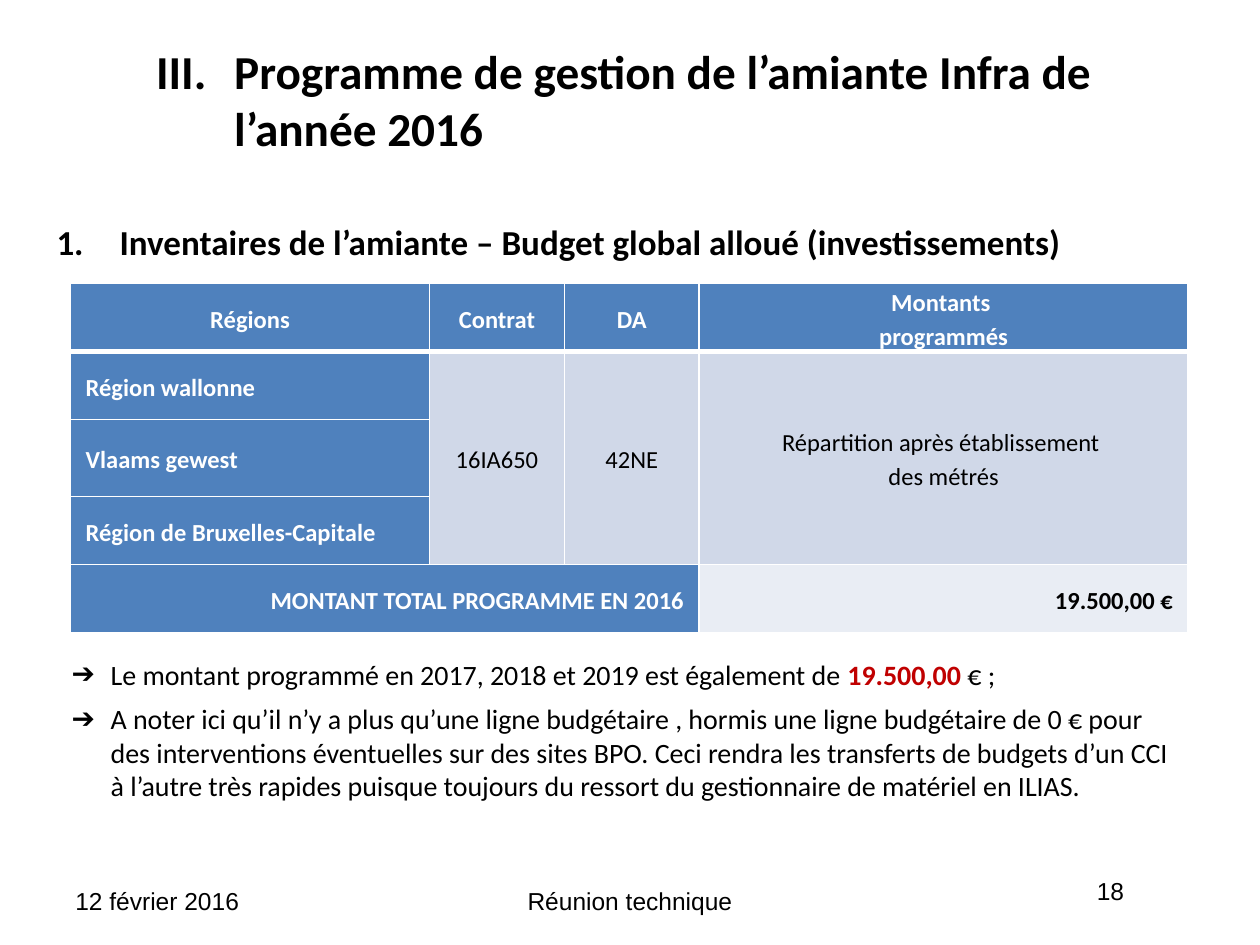
import pptx
import pptx.dml.color
import pptx.enum.text
import pptx.oxml.ns
import pptx.util
from lxml import etree

ALIGN = pptx.enum.text.PP_ALIGN
MIDDLE = pptx.enum.text.MSO_ANCHOR.MIDDLE
BLACK, WHITE, RED = "000000", "FFFFFF", "C00000"
BLUE, PALE, PALER = "4F81BD", "D0D8E8", "E9EDF4"
COLUMNS, ROWS = 100, 75


def color(value):
    return pptx.dml.color.RGBColor.from_string(value)


def add_element(parent, tag, **attributes):
    return etree.SubElement(parent, pptx.oxml.ns.qn(tag), attributes)


class SlideBuilder:
    """Holds the style and the slide; lengths are grid columns and rows."""

    def __init__(self, deck):
        self.column = deck.slide_width / COLUMNS
        self.row = deck.slide_height / ROWS
        self.slide = deck.slides.add_slide(deck.slide_layouts[6])

    def place(self, left, top, width, height):
        return (round(left * self.column), round(top * self.row),
                round(width * self.column), round(height * self.row))

    def style(self, para, size, name="Calibri", bold=False, ink=BLACK, align=ALIGN.LEFT):
        para.alignment = align
        para.font.size = pptx.util.Pt(size)
        para.font.name = name
        para.font.bold = bold
        para.font.color.rgb = color(ink)

    def text(self, area, content, size, anchor=None, **style):
        frame = self.slide.shapes.add_textbox(*self.place(*area)).text_frame
        frame.word_wrap = True
        frame.vertical_anchor = anchor
        para = frame.paragraphs[0]
        para.text = content
        self.style(para, size, **style)
        return para

    def hang(self, para, indent, bullet, **attributes):
        """Give the paragraph a hanging indent, in columns, and a bullet element."""
        properties = para._p.get_or_add_pPr()
        properties.set("marL", str(round(indent * self.column)))
        properties.set("indent", str(-round(indent * self.column)))
        add_element(properties, "a:buFont", typeface="+mj-lt" if bullet == "a:buAutoNum" else "Arial")
        add_element(properties, bullet, **attributes)

    def heading(self, area, content, size, indent, numbering, start=1, anchor=None):
        frame = self.slide.shapes.add_textbox(*self.place(*area)).text_frame
        frame.word_wrap = True
        frame.vertical_anchor = anchor
        para = frame.paragraphs[0]
        para.text = content
        self.hang(para, indent, "a:buAutoNum", type=numbering, startAt=str(start))
        self.style(para, size, bold=True)

    def bullets(self, area, items, size, indent):
        """Each item is a list of (text, emphasised) parts."""
        frame = self.slide.shapes.add_textbox(*self.place(*area)).text_frame
        frame.word_wrap = True
        for index, parts in enumerate(items):
            para = frame.add_paragraph() if index else frame.paragraphs[0]
            self.hang(para, indent, "a:buChar", char="➔")
            para.space_after = pptx.util.Pt(6)
            self.style(para, size)
            for content, emphasised in parts:
                span = para.add_run()
                span.text = content
                if emphasised:
                    span.font.bold = True
                    span.font.color.rgb = color(RED)

    def borders(self, cell, bottom):
        properties = cell._tc.get_or_add_tcPr()
        for side, width in (("L", 1), ("R", 1), ("T", 1), ("B", bottom)):
            line = add_element(properties, f"a:ln{side}", w=str(pptx.util.Pt(width)))
            add_element(add_element(line, "a:solidFill"), "a:srgbClr", val=WHITE)

    def table(self, area, widths, heights, cells, merges):
        """Cells map (row, column) to (text, fill, ink, bold, alignment)."""
        grid = self.slide.shapes.add_table(
            len(heights), len(widths), *self.place(*area)).table
        for column, width in zip(grid.columns, widths):
            column.width = round(width * self.column)
        for row, height in zip(grid.rows, heights):
            row.height = round(height * self.row)
        for first, last in merges:
            grid.cell(*first).merge(grid.cell(*last))
        for row in range(len(heights)):
            for column in range(len(widths)):
                self.borders(grid.cell(row, column), bottom=1 if row else 3)
        for position, (content, fill, ink, bold, align) in cells.items():
            cell = grid.cell(*position)
            cell.fill.solid()
            cell.fill.fore_color.rgb = color(fill)
            cell.vertical_anchor = MIDDLE
            cell.margin_left = cell.margin_right = round(1.2 * self.column)
            cell.margin_top = cell.margin_bottom = 0
            para = cell.text_frame.paragraphs[0]
            para.text = content
            para.line_spacing = 1.15
            self.style(para, 14, bold=bold, ink=ink, align=align)


def budget_cells():
    headers = ["Régions", "Contrat", "DA", "Montants \vprogrammés"]
    regions = ["Région wallonne", "Vlaams gewest", "Région de Bruxelles-Capitale"]
    shared = ["16IA650", "42NE", "Répartition après établissement \vdes métrés"]
    cells = {(0, column): (name, BLUE, WHITE, True, ALIGN.CENTER)
             for column, name in enumerate(headers)}
    cells |= {(row, 0): (name, BLUE, WHITE, True, ALIGN.LEFT)
              for row, name in enumerate(regions, 1)}
    cells |= {(1, column): (value, PALE, BLACK, False, ALIGN.CENTER)
              for column, value in enumerate(shared, 1)}
    cells[4, 0] = ("MONTANT TOTAL PROGRAMME EN 2016", BLUE, WHITE, True, ALIGN.RIGHT)
    cells[4, 3] = ("19.500,00 €", PALER, BLACK, True, ALIGN.RIGHT)
    return cells


def main():
    deck = pptx.Presentation()
    deck.slide_width = pptx.util.Inches(10)
    deck.slide_height = pptx.util.Inches(7.5)
    page = SlideBuilder(deck)

    page.heading((11.4, 3.6, 78.8, 8.5),
                 "Programme de gestion de l’amiante Infra de l’année 2016",
                 27, 6.2, "romanUcPeriod", start=3, anchor=MIDDLE)
    page.heading((3.5, 17, 94.5, 4.4),
                 "Inventaires de l’amiante – Budget global alloué (investissements)",
                 20, 5, "arabicPeriod")

    merges = [((1, column), (3, column)) for column in (1, 2, 3)]
    merges.append(((4, 0), (4, 2)))
    page.table((5.6, 22.5, 88.8, 27.6), [28.5, 10.7, 10.7, 38.8],
               [5.4, 5.4, 6.1, 5.4, 5.4], budget_cells(), merges)

    page.bullets((4.7, 51.7, 89.4, 12.6), [
        [("Le montant programmé en 2017, 2018 et 2019 est également de ", False),
         ("19.500,00 ", True), ("€ ;", False)],
        [("A noter ici qu’il n’y a plus qu’une ligne budgétaire , hormis une ligne "
          "budgétaire de 0 € pour des interventions éventuelles sur des sites BPO. "
          "Ceci rendra les transferts de budgets d’un CCI à l’autre très rapides "
          "puisque toujours du ressort du gestionnaire de matériel en ILIAS.", False)],
    ], 16, 3.1)

    for area, content, align in (
            ((5, 69.8, 23.3, 3.7), "12 février 2016", ALIGN.LEFT),
            ((31.1, 69.8, 37.8, 3.7), "Réunion technique", ALIGN.CENTER),
            ((71.7, 69, 18.5, 5.2), "18", ALIGN.RIGHT)):
        page.text(area, content, 14, name="Arial", align=align)

    deck.save("out.pptx")


if __name__ == "__main__":
    main()
